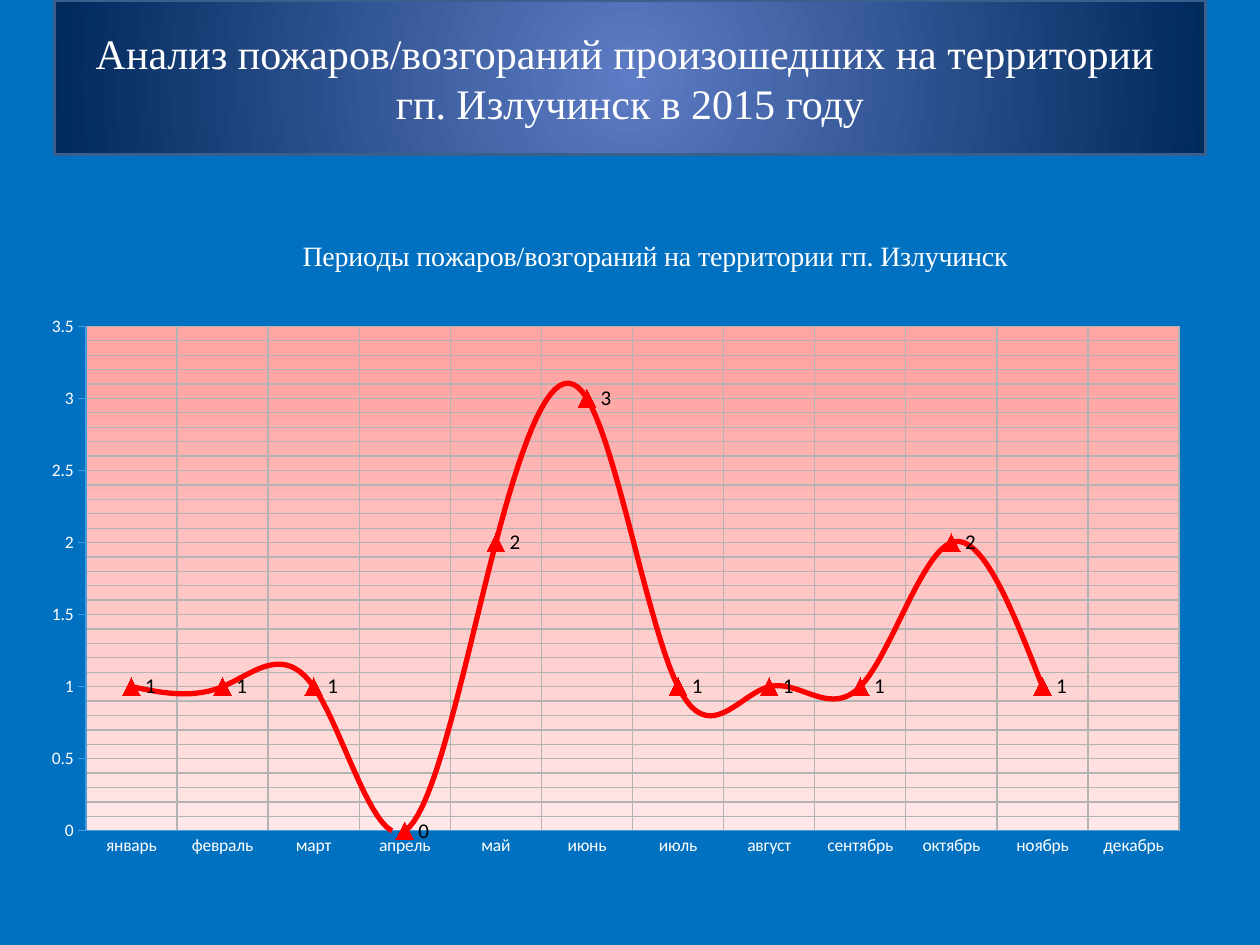
from lxml import etree
from pptx import Presentation
from pptx import util as u
from pptx.chart.data import CategoryChartData
from pptx.dml.color import RGBColor
from pptx.enum import chart as ch, text
from pptx.oxml import ns

COLORS = {
    "background": "0070C0", "white": "FFFFFF", "black": "000000", "red": "FF0000",
    "grid": "B3B3B3", "border": "3A5F8C", "axis": "4A9BDC",
}
TITLE_GRADIENT = [(0, "5E7CC5"), (100, "00295C")]
PLOT_GRADIENT = [(0, "FFE7E7"), (57, "FFC0BF"), (89, "FFA6A5")]
MONTHS = ["январь", "февраль", "март", "апрель", "май", "июнь", "июль",
          "август", "сентябрь", "октябрь", "ноябрь", "декабрь"]
FIRES = [1, 1, 1, 0, 2, 3, 1, 1, 1, 2, 1, None]


def rgb(name):
    return RGBColor.from_string(COLORS[name])


def write_text(frame, content, size=24, font="Times New Roman", color="white"):
    frame.text = content
    for paragraph in frame.paragraphs:
        paragraph.alignment = text.PP_ALIGN.CENTER
        for run in paragraph.runs:
            style_font(run.font, size, font, color)


def style_font(font, size, name, color):
    font.size = u.Pt(size)
    font.name = name
    font.bold = False
    font.color.rgb = rgb(color)


def style_line(line, color, width):
    line.color.rgb = rgb(color)
    line.width = u.Pt(width)


def gradient(stops, angle=None):
    fill = etree.Element(ns.qn("a:gradFill"), rotWithShape="1")
    stop_list = etree.SubElement(fill, ns.qn("a:gsLst"))
    for position, color in stops:
        stop = etree.SubElement(stop_list, ns.qn("a:gs"), pos=str(position * 1000))
        etree.SubElement(stop, ns.qn("a:srgbClr"), val=color)
    if angle is None:
        path = etree.SubElement(fill, ns.qn("a:path"), {"path": "circle"})
        etree.SubElement(path, ns.qn("a:fillToRect"),
                         {side: "50000" for side in "ltrb"})
    else:
        etree.SubElement(fill, ns.qn("a:lin"), ang=str(angle * 60000), scaled="0")
    return fill


def manual_layout(parent, index, inner=False, **position):
    for old in parent.findall(ns.qn("c:layout")):
        parent.remove(old)
    layout = etree.Element(ns.qn("c:layout"))
    manual = etree.SubElement(layout, ns.qn("c:manualLayout"))
    if inner:
        etree.SubElement(manual, ns.qn("c:layoutTarget"), val="inner")
    for mode in ("xMode", "yMode"):
        etree.SubElement(manual, ns.qn("c:" + mode), val="edge")
    for key, value in position.items():
        etree.SubElement(manual, ns.qn("c:" + key), val=str(value))
    parent.insert(index, layout)


def add_title(slide):
    title = slide.shapes.title
    title.left, title.top = u.Cm(1.1), u.Cm(0)
    title.width, title.height = u.Cm(23.2), u.Cm(3.12)
    title.fill.solid()
    properties = title._element.spPr
    properties.replace(properties.find(ns.qn("a:solidFill")), gradient(TITLE_GRADIENT))
    style_line(title.line, "border", 2)
    frame = title.text_frame
    frame.word_wrap = True
    frame.auto_size = text.MSO_AUTO_SIZE.NONE
    frame.vertical_anchor = text.MSO_ANCHOR.MIDDLE
    write_text(frame, "Анализ пожаров/возгораний произошедших на территории \n"
                      "гп. Излучинск в 2015 году")


def color_minor_gridlines(axis):
    gridlines = axis._element.find(ns.qn("c:minorGridlines"))
    properties = etree.SubElement(gridlines, ns.qn("c:spPr"))
    line = etree.SubElement(properties, ns.qn("a:ln"), w=str(u.Pt(0.75)))
    fill = etree.SubElement(line, ns.qn("a:solidFill"))
    etree.SubElement(fill, ns.qn("a:srgbClr"), val=COLORS["grid"])


def style_axes(chart):
    months, values = chart.category_axis, chart.value_axis
    months.major_tick_mark = ch.XL_TICK_MARK.NONE
    values.major_tick_mark = ch.XL_TICK_MARK.OUTSIDE
    values.minimum_scale, values.maximum_scale = 0, 3.5
    values.major_unit, values.minor_unit = 0.5, 0.1
    for axis in (months, values):
        axis.has_major_gridlines = True
        style_line(axis.major_gridlines.format.line, "grid", 0.75)
        style_line(axis.format.line, "axis", 0.75)
    values.has_minor_gridlines = True
    color_minor_gridlines(values)


def style_series(plot):
    series = plot.series[0]
    series.smooth = True
    style_line(series.format.line, "red", 3)
    series.marker.style = ch.XL_MARKER_STYLE.TRIANGLE
    series.marker.size = 10
    series.marker.format.fill.solid()
    series.marker.format.fill.fore_color.rgb = rgb("red")
    series.marker.format.line.color.rgb = rgb("red")
    labels = series.data_labels
    labels.show_value = True
    labels.position = ch.XL_LABEL_POSITION.RIGHT
    style_font(labels.font, 12, "Calibri", "black")


def add_fire_chart(slide):
    data = CategoryChartData()
    data.categories = MONTHS
    data.add_series("Series 1", FIRES)
    chart = slide.shapes.add_chart(
        ch.XL_CHART_TYPE.LINE_MARKERS_STACKED,
        u.Cm(1.02), u.Cm(4.11), u.Cm(23.7), u.Cm(14.53), data).chart
    chart.has_legend = False
    style_font(chart.font, 10, "Calibri", "white")
    write_text(chart.chart_title.text_frame,
               "Периоды пожаров/возгораний на территории гп. Излучинск", size=16)
    manual_layout(chart.chart_title._element, 1, x=0.21, y=0.04)
    chart.plots[0].vary_by_categories = False
    style_axes(chart)
    style_series(chart.plots[0])
    area = chart._chartSpace.chart.plotArea
    manual_layout(area, 0, inner=True, x=0.03, y=0.17, w=0.93, h=0.7)
    etree.SubElement(area, ns.qn("c:spPr")).append(gradient(PLOT_GRADIENT, 270))


def main():
    presentation = Presentation()
    presentation.slide_width, presentation.slide_height = u.Cm(25.4), u.Cm(19.05)
    slide = presentation.slides.add_slide(presentation.slide_layouts[5])
    slide.background.fill.solid()
    slide.background.fill.fore_color.rgb = rgb("background")
    add_title(slide)
    add_fire_chart(slide)
    presentation.save("out.pptx")


if __name__ == "__main__":
    main()
